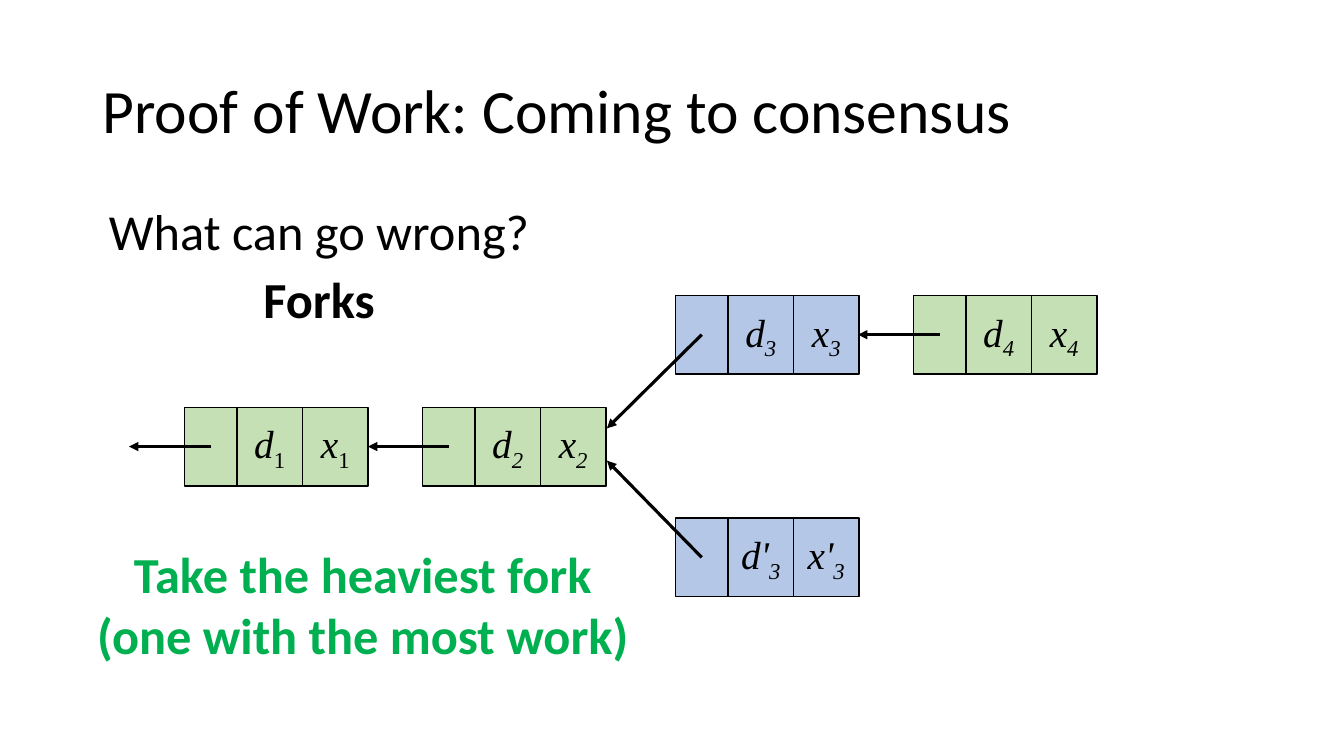
from pptx import Presentation, util as u
from pptx.dml.color import RGBColor
from pptx.enum import shapes, text
from pptx.oxml.ns import qn
from lxml import etree

BLACK = RGBColor(0, 0, 0)
GREEN = RGBColor(0xC5, 0xE0, 0xB4)
BLUE = RGBColor(0xB4, 0xC7, 0xE7)
ADVICE_GREEN = RGBColor(0, 0xB0, 0x50)

# Content: paragraphs are lists of (words, style) runs
TITLE = [[("Proof of Work: Coming to consensus", "")]]
QUESTION = [[("What can go wrong?", "")], [("Forks", "b")]]
ADVICE = [[("Take the heaviest fork", "b")], [("(one with the most work)", "b")]]

# Blocks: left, top, fill, mark, index, index style, arrow end
BLOCKS = [
    (1.83, 4.04, GREEN, "", "1", "s", (1.28, 4.43)),
    (4.19, 4.04, GREEN, "", "2", "is", (3.65, 4.43)),
    (6.7, 2.93, BLUE, "", "3", "is", (6.02, 4.25)),
    (6.7, 5.14, BLUE, "'", "3", "is", (6.02, 4.57)),
    (9.06, 2.93, GREEN, "", "4", "is", (8.51, 3.32)),
]
LINK_WIDTH, CELL_WIDTH, CELL_HEIGHT = 0.52, 0.65, 0.78

deck = Presentation()
deck.slide_width, deck.slide_height = u.Inches(13.33), u.Inches(7.5)
page = deck.slides.add_slide(deck.slide_layouts[6])


def write(box, paragraphs, size=36, font="Calibri", color=BLACK, wrap=True,
          align=text.PP_ALIGN.CENTER, anchor=text.MSO_ANCHOR.TOP,
          spacing=None, before=0):
    """Style letters: b bold, i italic, s subscript."""
    frame = box.text_frame
    frame.word_wrap, frame.vertical_anchor = wrap, anchor
    for number, runs in enumerate(paragraphs):
        para = frame.add_paragraph() if number else frame.paragraphs[0]
        para.alignment, para.line_spacing = align, spacing
        para.space_before = u.Pt(before)
        for words, style in runs:
            span = para.add_run()
            span.text = words
            span.font.name, span.font.size = font, u.Pt(size)
            span.font.color.rgb = color
            span.font.bold, span.font.italic = "b" in style, "i" in style
            if "s" in style:
                span.font._element.set("baseline", "-25000")


def add_text(left, top, width, height, paragraphs, **style):
    box = page.shapes.add_textbox(*map(u.Inches, (left, top, width, height)))
    write(box, paragraphs, **style)


def add_cell(left, top, width, fill, runs):
    box = page.shapes.add_shape(shapes.MSO_SHAPE.RECTANGLE,
                                *map(u.Inches, (left, top, width, CELL_HEIGHT)))
    box.shadow.inherit = False
    box.fill.solid()
    box.fill.fore_color.rgb = fill
    box.line.color.rgb, box.line.width = BLACK, u.Pt(1)
    if runs:
        write(box, [runs], size=28, font="Times New Roman",
              anchor=text.MSO_ANCHOR.MIDDLE)


def add_arrow(start, end):
    arrow = page.shapes.add_connector(shapes.MSO_CONNECTOR.STRAIGHT,
                                      *map(u.Inches, start + end))
    arrow.line.color.rgb, arrow.line.width = BLACK, u.Pt(2.25)
    etree.SubElement(arrow.line._get_or_add_ln(), qn("a:tailEnd"), type="triangle")
    etree.SubElement(arrow._element.spPr, qn("a:effectLst"))


# Heading and question
add_text(0.92, 0.4, 11.5, 1.45, TITLE, size=44, align=text.PP_ALIGN.LEFT,
         anchor=text.MSO_ANCHOR.MIDDLE, spacing=0.9)
add_text(0.92, 2, 4.49, 4.76, QUESTION, spacing=0.9, before=10)

# Chain of blocks: link cell, arrow to the previous block, then d and x
for left, top, fill, mark, index, index_style, arrow_end in BLOCKS:
    add_cell(left, top, LINK_WIDTH, fill, [])
    add_arrow((left + LINK_WIDTH / 2, top + CELL_HEIGHT / 2), arrow_end)
    for column, letter in enumerate("dx"):
        add_cell(left + LINK_WIDTH + column * CELL_WIDTH, top, CELL_WIDTH, fill,
                 [(letter + mark, "i"), (index, index_style)])

# Advice
add_text(0.83, 5.34, 5.54, 1.31, ADVICE, color=ADVICE_GREEN, wrap=False)

deck.save("out.pptx")
